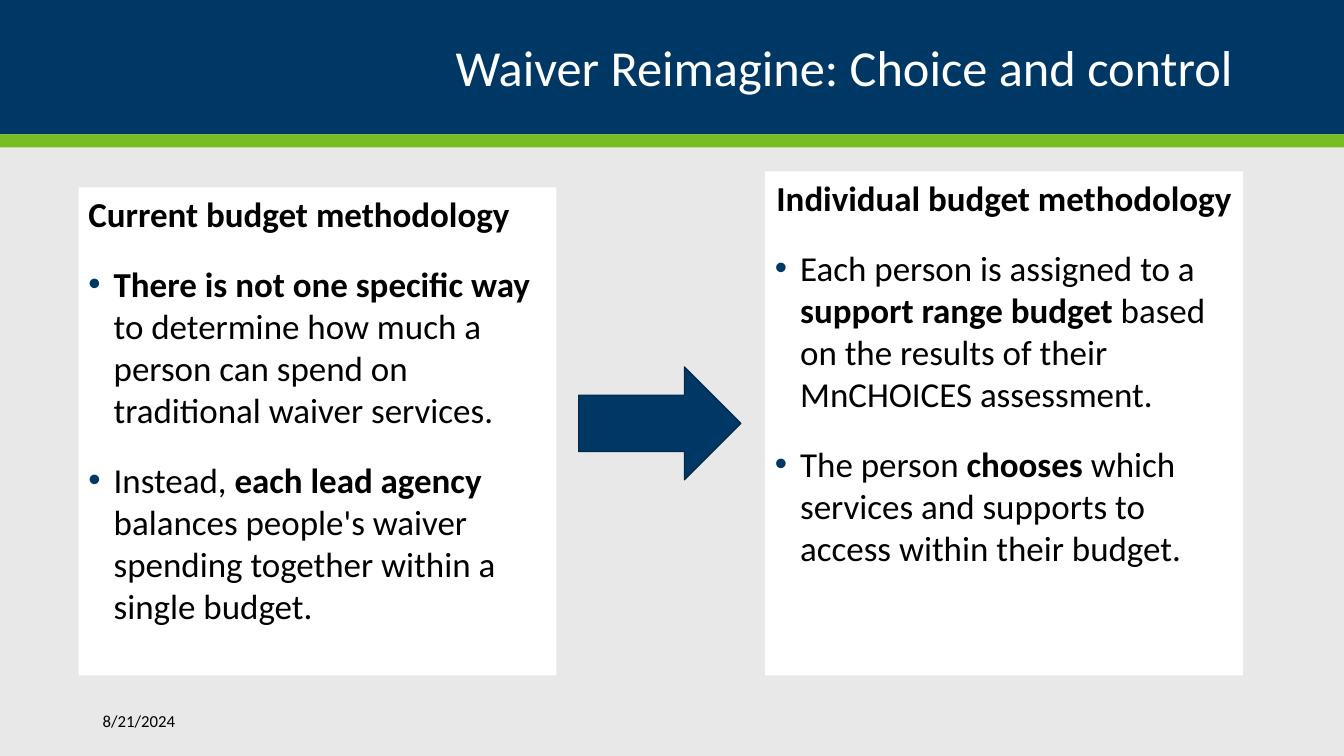
"""Build the slide that compares the current and individual budget methodologies."""
import dataclasses

import lxml.etree
import pptx
import pptx.dml.color
import pptx.enum.shapes
import pptx.enum.text
import pptx.oxml.ns
import pptx.util

Pt = pptx.util.Pt
Color = pptx.dml.color.RGBColor
Align = pptx.enum.text.PP_ALIGN
Anchor = pptx.enum.text.MSO_ANCHOR
Shape = pptx.enum.shapes.MSO_SHAPE


@dataclasses.dataclass(frozen=True)
class Theme:
    font: str = "Calibri"
    navy: Color = Color(0x00, 0x38, 0x65)
    navy_edge: Color = Color(0x00, 0x29, 0x4B)
    green: Color = Color(0x78, 0xBE, 0x21)
    page: Color = Color(0xE8, 0xE8, 0xE8)
    white: Color = Color(0xFF, 0xFF, 0xFF)
    black: Color = Color(0x00, 0x00, 0x00)
    title_size: float = 36
    body_size: float = 25
    date_size: float = 12
    body_gap: float = 10
    bullet_indent: float = 18


@dataclasses.dataclass(frozen=True)
class Area:
    left: float
    top: float
    width: float
    height: float

    def lengths(self) -> tuple:
        return Pt(self.left), Pt(self.top), Pt(self.width), Pt(self.height)


@dataclasses.dataclass(frozen=True)
class Span:
    text: str
    bold: bool = False


@dataclasses.dataclass(frozen=True)
class Panel:
    area: Area
    heading: str
    heading_align: Align
    bullets: tuple[tuple[Span, ...], ...]


THEME = Theme()
PAGE = Area(0, 0, 960, 540)
TITLE_AREA = Area(72, 14.4, 816, 72)
ARROW_AREA = Area(413.28, 262.08, 115.92, 80.64)
DATE_AREA = Area(66.24, 500.4, 107.28, 28.8)
BANDS = (
    (Area(0, 0, 960, 96), THEME.navy),
    (Area(0, 96, 960, 9.2), THEME.green),
)
PANELS = (
    Panel(
        Area(56.16, 133.92, 341.28, 348.48),
        "Current budget methodology",
        Align.LEFT,
        (
            (
                Span("There is not one specific way ", True),
                Span("to determine how much a person can spend on traditional waiver services."),
            ),
            (
                Span("Instead, "),
                Span("each lead agency", True),
                Span(" balances people's waiver spending together within a single budget."),
            ),
        ),
    ),
    Panel(
        Area(546.48, 122.4, 341.28, 360),
        "Individual budget methodology ",
        Align.CENTER,
        (
            (
                Span("Each person is assigned to a "),
                Span("support range budget ", True),
                Span("based on the results of their MnCHOICES assessment."),
            ),
            (
                Span("The person "),
                Span("chooses", True),
                Span(" which services and supports to access within their budget."),
            ),
        ),
    ),
)


def style_font(font, size: float, color: Color, bold: bool = False) -> None:
    font.name = THEME.font
    font.size = Pt(size)
    font.color.rgb = color
    font.bold = bold


def add_block(page, kind: Shape, area: Area, fill: Color):
    block = page.shapes.add_shape(kind, *area.lengths())
    block.shadow.inherit = False
    block.fill.solid()
    block.fill.fore_color.rgb = fill
    block.line.fill.background()
    return block


def add_bullet(para) -> None:
    properties = para._p.get_or_add_pPr()
    indent = Pt(THEME.bullet_indent)
    properties.set("marL", str(indent))
    properties.set("indent", str(-indent))
    qn = pptx.oxml.ns.qn
    color = lxml.etree.SubElement(properties, qn("a:buClr"))
    lxml.etree.SubElement(color, qn("a:srgbClr")).set("val", str(THEME.navy))
    lxml.etree.SubElement(properties, qn("a:buFont")).set("typeface", "Arial")
    lxml.etree.SubElement(properties, qn("a:buChar")).set("char", "•")


def write_spans(para, spans: tuple[Span, ...], align: Align) -> None:
    para.alignment = align
    para.space_after = Pt(THEME.body_gap)
    for span in spans:
        run = para.add_run()
        run.text = span.text
        style_font(run.font, THEME.body_size, THEME.black, span.bold)


def add_panel(page, panel: Panel) -> None:
    box = add_block(page, Shape.RECTANGLE, panel.area, THEME.white)
    frame = box.text_frame
    frame.word_wrap = True
    frame.vertical_anchor = Anchor.TOP
    heading = (Span(panel.heading, True),)
    write_spans(frame.paragraphs[0], heading, panel.heading_align)
    for spans in panel.bullets:
        para = frame.add_paragraph()
        para.space_before = Pt(THEME.body_gap)
        add_bullet(para)
        write_spans(para, spans, Align.LEFT)


def add_title(page, text: str) -> None:
    title = page.shapes.title
    title.left, title.top, title.width, title.height = TITLE_AREA.lengths()
    frame = title.text_frame
    frame.text = text
    frame.word_wrap = True
    frame.vertical_anchor = Anchor.MIDDLE
    para = frame.paragraphs[0]
    para.alignment = Align.RIGHT
    para.line_spacing = 0.9
    style_font(para.runs[0].font, THEME.title_size, THEME.white)


def add_date(page, text: str) -> None:
    box = page.shapes.add_textbox(*DATE_AREA.lengths())
    frame = box.text_frame
    frame.text = text
    frame.word_wrap = True
    frame.vertical_anchor = Anchor.MIDDLE
    style_font(frame.paragraphs[0].runs[0].font, THEME.date_size, THEME.black)


def main() -> None:
    deck = pptx.Presentation()
    deck.slide_width, deck.slide_height = Pt(PAGE.width), Pt(PAGE.height)
    page = deck.slides.add_slide(deck.slide_layouts[5])
    page.background.fill.solid()
    page.background.fill.fore_color.rgb = THEME.page
    for area, color in BANDS:
        band = add_block(page, Shape.RECTANGLE, area, color)
        page.shapes.title.element.addprevious(band.element)
    add_title(page, "Waiver Reimagine: Choice and control")
    for panel in PANELS:
        add_panel(page, panel)
    arrow = add_block(page, Shape.RIGHT_ARROW, ARROW_AREA, THEME.navy)
    arrow.line.color.rgb = THEME.navy_edge
    arrow.line.width = Pt(0.85)
    add_date(page, "8/21/2024")
    deck.save("out.pptx")


if __name__ == "__main__":
    main()
